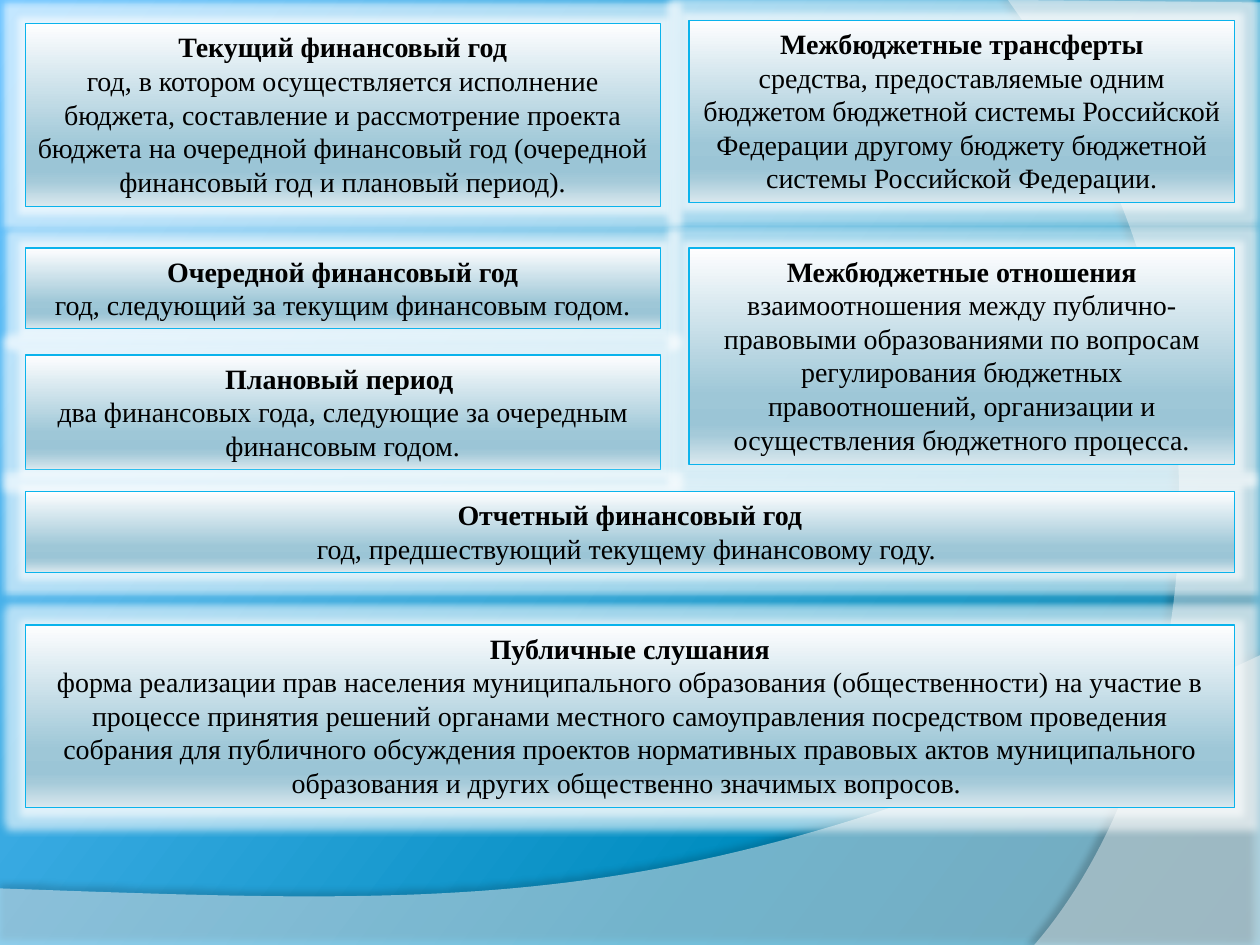
from lxml import etree
from pptx import Presentation, util as u
from pptx.dml.color import RGBColor
from pptx.enum import shapes, text
from pptx.oxml import ns

Cm = u.Cm


def paint(fill, element, colours, angle=0):
    """Fill with one hex colour, or with a list of (percent, hex) gradient stops."""
    if isinstance(colours, str):
        fill.solid()
        fill.fore_color.rgb = RGBColor.from_string(colours)
        return
    fill.gradient()
    gradient = element.find(".//" + ns.qn("a:gradFill"))
    stops = gradient.find(ns.qn("a:gsLst"))
    for stop in list(stops):
        stops.remove(stop)
    for percent, colour in colours:
        stop = etree.SubElement(stops, ns.qn("a:gs"), pos=str(percent * 1000))
        etree.SubElement(stop, ns.qn("a:srgbClr"), val=colour)
    gradient.find(ns.qn("a:lin")).set("ang", str(angle * 60000))


def write(paragraph, words, size=16, bold=False, colour="000000", font="Times New Roman"):
    paragraph.alignment = text.PP_ALIGN.CENTER
    run = paragraph.add_run()
    run.text = words
    run.font.name = font
    run.font.size = u.Pt(size)
    run.font.bold = bold
    paint(run.font.fill, None, colour)


presentation = Presentation()
presentation.slide_width, presentation.slide_height = Cm(25.4), Cm(19.05)
slide = presentation.slides.add_slide(presentation.slide_layouts[6])
paint(slide.background.fill, slide.element,
      [(0, "0076A1"), (30, "008DC0"), (100, "6AC3FF")], angle=217)

# Translucent waves: straight corners, then a Bezier curve from the last corner.
# Each: corners, curve controls and end, opacity, shadow opacity, distance, direction
waves = [
    ([(0, 17.91), (0, 19.05), (25.4, 19.05), (25.4, 13.21)],
     [(14.2, 18.52), (9.93, 18.26), (0, 17.91)], 45, 35, 3.5, 270),
    ([(25.4, 0.05), (25.4, 19.05), (20.85, 19.05)],
     [(23.75, 15.72), (25.86, 7.62), (20.32, 0)], 40, 45, 4, 180),
]
STEPS = 60
for corners, curve, opacity, shadow_opacity, distance, direction in waves:
    points = list(corners)
    controls = [corners[-1]] + curve
    for step in range(1, STEPS + 1):
        t = step / STEPS
        weights = [(1 - t) ** 3, 3 * t * (1 - t) ** 2, 3 * t ** 2 * (1 - t), t ** 3]
        points.append([sum(w * p[axis] for w, p in zip(weights, controls)) for axis in (0, 1)])
    outline = [(Cm(x), Cm(y)) for x, y in points]
    builder = slide.shapes.build_freeform(*outline[0])
    builder.add_line_segments(outline[1:], close=True)
    wave = builder.convert_to_shape()
    wave.line.fill.background()
    paint(wave.fill, wave.element, "FFFFFF")
    white = wave.element.find(".//" + ns.qn("a:srgbClr"))
    etree.SubElement(white, ns.qn("a:alpha"), val=str(opacity * 1000))
    wave.shadow.inherit = False
    effects = wave.element.spPr.find(ns.qn("a:effectLst"))
    shadow = etree.SubElement(effects, ns.qn("a:outerShdw"), blurRad=str(u.Pt(4)),
                              dist=str(u.Pt(distance)), dir=str(direction * 60000),
                              algn="ctr", rotWithShape="0")
    black = etree.SubElement(shadow, ns.qn("a:srgbClr"), val="000000")
    etree.SubElement(black, ns.qn("a:alpha"), val=str(shadow_opacity * 1000))

LEFT, RIGHT = 0.51, 13.89
NARROW, MIDDLE, WIDE = 11, 12.8, 24.38
definitions = [
    (RIGHT, 5, NARROW, 4.37, "Межбюджетные отношения",
     "взаимоотношения между публично-правовыми образованиями по вопросам регулирования "
     "бюджетных правоотношений, организации и осуществления бюджетного процесса."),
    (RIGHT, 0.41, NARROW, 3.68, "Межбюджетные трансферты",
     "средства, предоставляемые одним бюджетом бюджетной системы Российской Федерации "
     "другому бюджету бюджетной системы Российской Федерации."),
    (LEFT, 0.48, MIDDLE, 3.68, "Текущий финансовый год",
     "год, в котором осуществляется исполнение бюджета, составление и рассмотрение проекта "
     "бюджета на очередной финансовый год (очередной финансовый год и плановый период)."),
    (LEFT, 5, MIDDLE, 1.63, "Очередной финансовый год",
     "год, следующий за текущим финансовым годом."),
    (LEFT, 7.16, MIDDLE, 2.31, "Плановый период ",
     "два финансовых года, следующие за очередным финансовым годом."),
    (LEFT, 9.91, WIDE, 1.63, "Отчетный финансовый год",
     "год, предшествующий текущему финансовому году. "),
    (LEFT, 12.6, WIDE, 3.68, "Публичные слушания",
     "форма реализации прав населения муниципального образования (общественности) на участие "
     "в процессе принятия решений органами местного самоуправления посредством проведения "
     "собрания для публичного обсуждения проектов нормативных правовых актов муниципального "
     "образования и других общественно значимых вопросов. "),
]
BOX_GRADIENT = [(0, "FEFEFF"), (68, "9EC7D7"), (81, "9BC5D6"), (86, "A5CAD9"), (100, "DAE8EE")]
for left, top, width, height, term, meaning in definitions:
    box = slide.shapes.add_shape(shapes.MSO_SHAPE.RECTANGLE,
                                 Cm(left), Cm(top), Cm(width), Cm(height))
    paint(box.fill, box.element, BOX_GRADIENT, angle=90)
    paint(box.line.fill, box.element, "0AB3EC")
    box.line.width = u.Pt(0.75)
    box.shadow.inherit = False
    effects = box.element.spPr.find(ns.qn("a:effectLst"))
    glow = etree.SubElement(effects, ns.qn("a:glow"), rad=str(u.Pt(8)))
    halo = etree.SubElement(glow, ns.qn("a:srgbClr"), val="FFFFFF")
    etree.SubElement(halo, ns.qn("a:alpha"), val="60000")
    frame = box.text_frame
    frame.word_wrap = True
    frame.auto_size = text.MSO_AUTO_SIZE.SHAPE_TO_FIT_TEXT
    frame.vertical_anchor = text.MSO_ANCHOR.TOP
    write(frame.paragraphs[0], term, bold=True)
    write(frame.add_paragraph(), meaning)

presentation.save("out.pptx")
